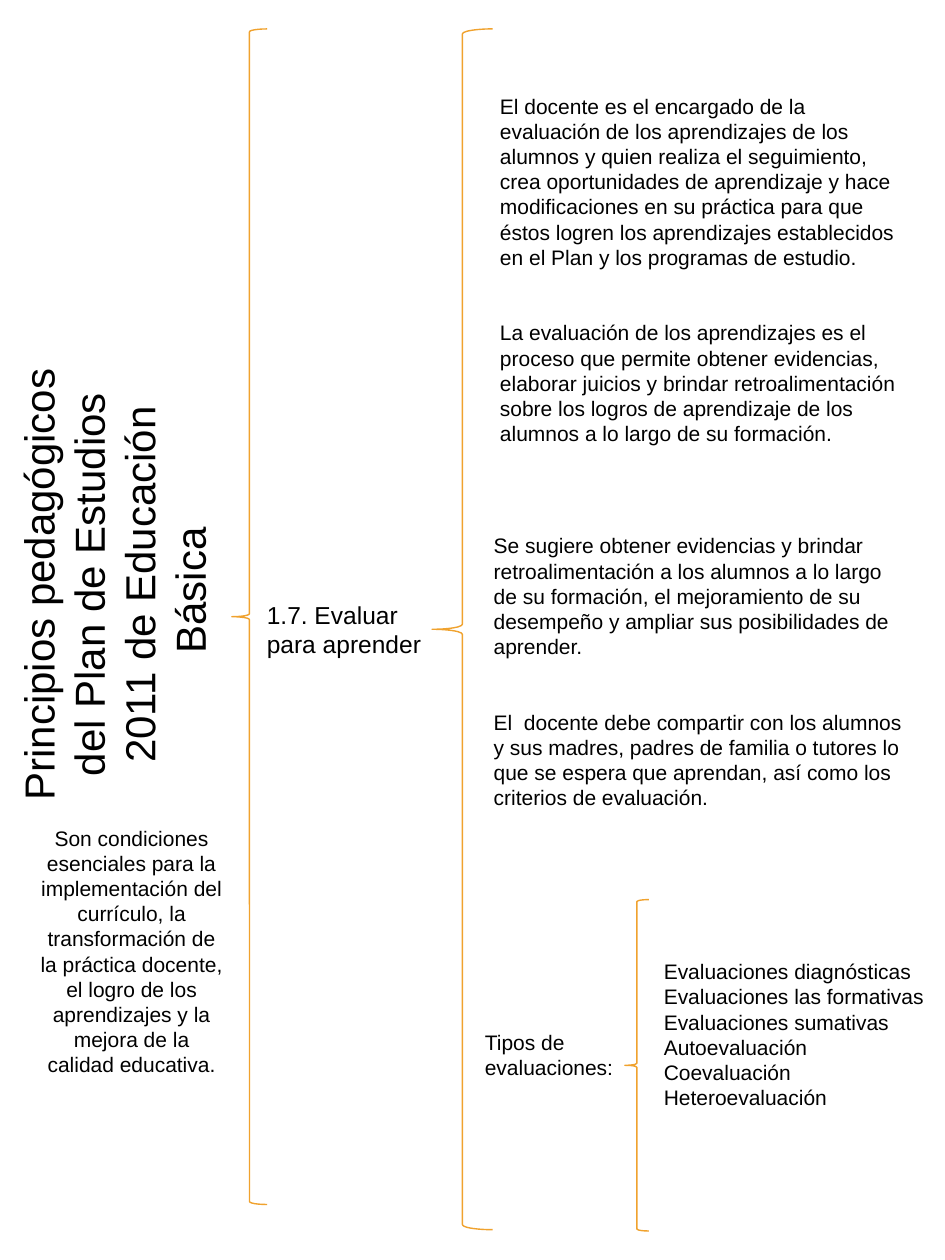
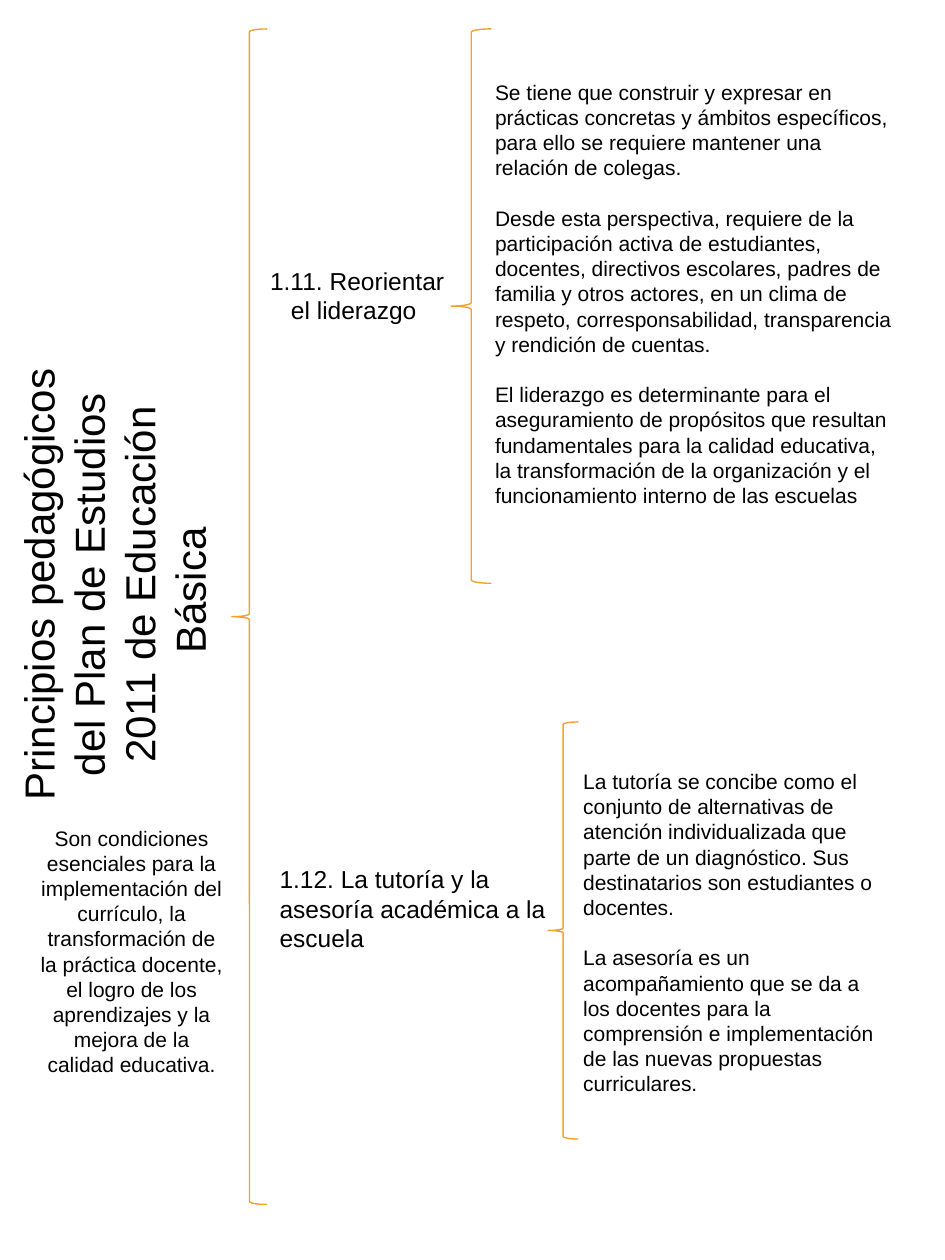
from dataclasses import dataclass

from pptx import Presentation
from pptx.dml.color import RGBColor
from pptx.enum.shapes import MSO_SHAPE
from pptx.enum.text import MSO_ANCHOR, MSO_AUTO_SIZE, PP_ALIGN
from pptx.slide import Slide
from pptx.util import Inches, Pt

LEFT_BRACE = MSO_SHAPE.LEFT_BRACE
LEFT, CENTER = PP_ALIGN.LEFT, PP_ALIGN.CENTER
TOP = MSO_ANCHOR.TOP
FIXED_SIZE = MSO_AUTO_SIZE.NONE

PAGE_WIDTH, PAGE_HEIGHT = Inches(7.5), Inches(10)
BLANK_LAYOUT = 6

# Shared style
FONT = "Arial"
INK = "000000"
ORANGE = "F0A22E"
BRACE_WEIGHT = 0.79
LINE_RATIO = 1.2
TITLE_SIZE, HEADING_SIZE, BODY_SIZE = 24, 14, 12


@dataclass(frozen=True)
class Area:
    """A rectangle in percent of the page width and height."""
    left: float
    top: float
    width: float
    height: float

    def lengths(self) -> tuple[int, int, int, int]:
        return (int(PAGE_WIDTH * self.left / 100), int(PAGE_HEIGHT * self.top / 100),
                int(PAGE_WIDTH * self.width / 100), int(PAGE_HEIGHT * self.height / 100))


@dataclass(frozen=True)
class Block:
    """Text in an area; gap is the number of open lines between paragraphs."""
    area: Area
    paragraphs: tuple[str, ...]
    size: int = BODY_SIZE
    align: PP_ALIGN = LEFT
    gap: int = 0
    vertical: bool = False


@dataclass(frozen=True)
class Page:
    braces: tuple[Area, ...]
    blocks: tuple[Block, ...]


# Parts on every slide
SHARED = Page(
    braces=(Area(24.53, 2.3, 3.73, 93.3),),
    blocks=(
        Block(Area(0.67, 27.7, 24.27, 37.4),
              ("Principios pedagógicos del Plan de Estudios 2011 de Educación Básica ",),
              size=TITLE_SIZE, align=CENTER, vertical=True),
        Block(Area(2.8, 65, 22.27, 21.2),
              ("Son condiciones esenciales para la implementación del currículo, la "
               "transformación de la práctica docente, el logro de los aprendizajes y la "
               "mejora de la calidad educativa.",),
              align=CENTER),
    ),
)

# Evaluation
EVALUATION = Page(
    braces=(Area(45.73, 2.3, 6.4, 95.3), Area(66.13, 71.4, 2.53, 26.3)),
    blocks=(
        Block(Area(26.93, 47.1, 20.4, 5.7), ("1.7. Evaluar para aprender",),
              size=HEADING_SIZE),
        Block(Area(51.6, 6.9, 45.47, 29.3),
              ("El docente es el encargado de la evaluación de los aprendizajes de los "
               "alumnos y quien realiza el seguimiento, crea oportunidades de aprendizaje "
               "y hace modificaciones en su práctica para que éstos logren los "
               "aprendizajes establecidos en el Plan y los programas de estudio.",
               "La evaluación de los aprendizajes es el proceso que permite obtener "
               "evidencias, elaborar juicios y brindar retroalimentación sobre los logros "
               "de aprendizaje de los alumnos a lo largo de su formación."),
              gap=2),
        Block(Area(50.93, 41.8, 46.67, 23.2),
              ("Se sugiere obtener evidencias y brindar retroalimentación a los alumnos a "
               "lo largo de su formación, el mejoramiento de su desempeño y ampliar sus "
               "posibilidades de aprender.",
               "El  docente debe compartir con los alumnos y sus madres, padres de familia "
               "o tutores lo que se espera que aprendan, así como los criterios de "
               "evaluación."),
              gap=2),
        Block(Area(68.93, 75.6, 30.8, 13.1),
              ("Evaluaciones diagnósticas", "Evaluaciones las formativas",
               "Evaluaciones sumativas", "Autoevaluación", "Coevaluación",
               "Heteroevaluación")),
        Block(Area(50, 81.2, 17.87, 5), ("Tipos de evaluaciones:",)),
    ),
)

# Leadership and tutoring
LEADERSHIP = Page(
    braces=(Area(47.73, 2.3, 4.27, 44), Area(58, 57.3, 3.2, 33.1)),
    blocks=(
        Block(Area(26.4, 20.6, 22.8, 5.7), ("1.11. Reorientar el liderazgo ",),
              size=HEADING_SIZE, align=CENTER),
        Block(Area(51.07, 5.8, 44.93, 35.3),
              ("Se tiene que construir y expresar en prácticas concretas y ámbitos "
               "específicos, para ello se requiere mantener una relación de colegas.",
               "Desde esta perspectiva, requiere de la participación activa de "
               "estudiantes, docentes, directivos escolares, padres de familia y otros "
               "actores, en un clima de respeto, corresponsabilidad, transparencia y "
               "rendición de cuentas.",
               "El liderazgo es determinante para el aseguramiento de propósitos que "
               "resultan fundamentales para la calidad educativa, la transformación de la "
               "organización y el funcionamiento interno de las escuelas"),
              gap=1),
        Block(Area(28.27, 68.1, 32.93, 8.1),
              ("1.12. La tutoría y la asesoría académica a la escuela",),
              size=HEADING_SIZE),
        Block(Area(60.4, 60.5, 34.67, 27.3),
              ("La tutoría se concibe como el conjunto de alternativas de atención "
               "individualizada que parte de un diagnóstico. Sus destinatarios son "
               "estudiantes o docentes.",
               "La asesoría es un acompañamiento que se da a los docentes para la "
               "comprensión e implementación de las nuevas propuestas curriculares."),
              gap=1),
    ),
)


def color(value: str) -> RGBColor:
    return RGBColor.from_string(value)


def add_brace(slide: Slide, area: Area) -> None:
    brace = slide.shapes.add_shape(LEFT_BRACE, *area.lengths())
    brace.shadow.inherit = False
    brace.fill.background()
    brace.line.color.rgb = color(ORANGE)
    brace.line.width = Pt(BRACE_WEIGHT)


def add_text(slide: Slide, area: Area, paragraphs: tuple[str, ...], *, size: int,
             align: PP_ALIGN, gap: int, vertical: bool) -> None:
    frame = slide.shapes.add_textbox(*area.lengths()).text_frame
    frame.word_wrap = True
    frame.auto_size = FIXED_SIZE
    frame.vertical_anchor = TOP
    if vertical:
        frame._txBody.bodyPr.set("vert", "vert270")
    line_height = size * LINE_RATIO
    for index, text in enumerate(paragraphs):
        para = frame.add_paragraph() if index else frame.paragraphs[0]
        para.alignment = align
        para.line_spacing = Pt(line_height)
        para.space_before = Pt(gap * line_height if index else 0)
        span = para.add_run()
        span.text = text
        span.font.name = FONT
        span.font.size = Pt(size)
        span.font.color.rgb = color(INK)


def draw(slide: Slide, page: Page) -> None:
    for area in page.braces:
        add_brace(slide, area)
    for block in page.blocks:
        add_text(slide, block.area, block.paragraphs, size=block.size,
                 align=block.align, gap=block.gap, vertical=block.vertical)


def main() -> None:
    deck = Presentation()
    deck.slide_width, deck.slide_height = PAGE_WIDTH, PAGE_HEIGHT
    for page in (EVALUATION, LEADERSHIP):
        slide = deck.slides.add_slide(deck.slide_layouts[BLANK_LAYOUT])
        draw(slide, SHARED)
        draw(slide, page)
    deck.save("out.pptx")


if __name__ == "__main__":
    main()
